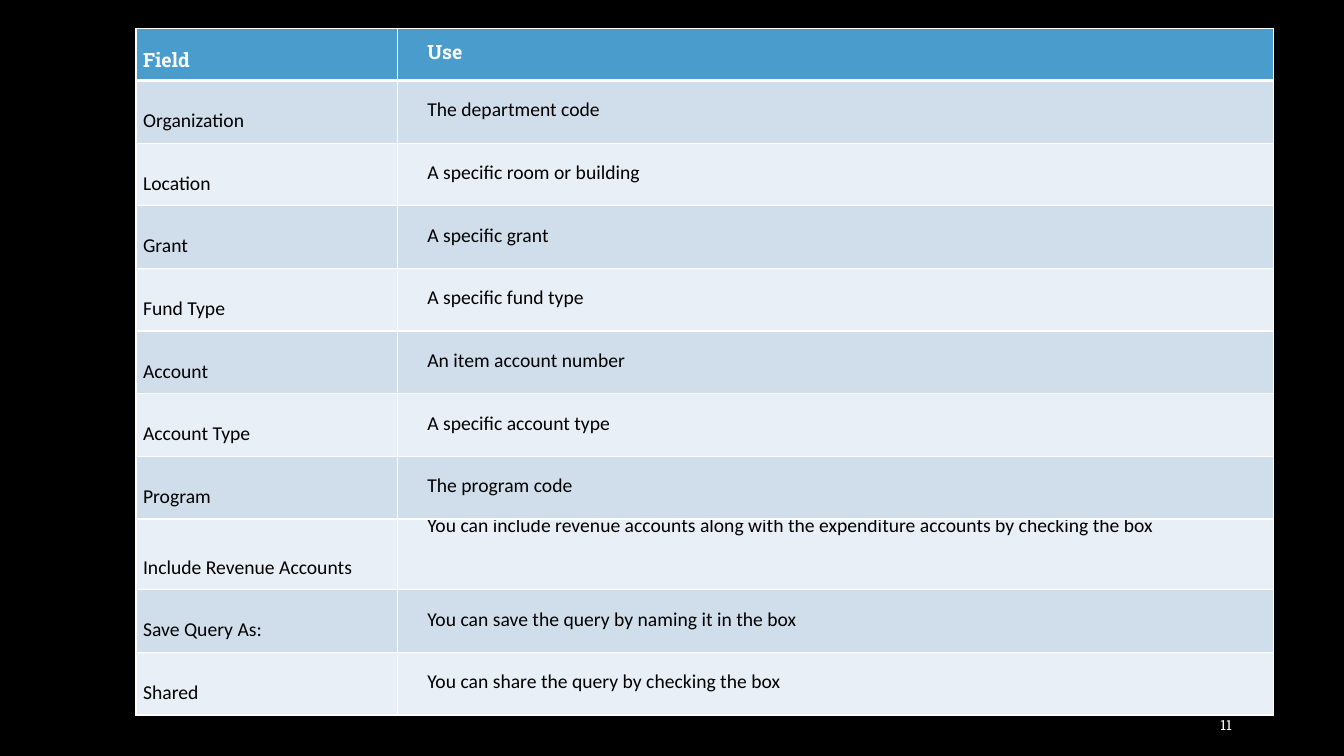
"""Builds the slide listing the query fields and what each is used for."""
from lxml import etree
from pptx import Presentation
from pptx.dml.color import RGBColor
from pptx.enum import text
from pptx.oxml import ns
from pptx.util import Pt

FIELDS = [
    ("Field", "Use"),
    ("Organization", "The department code"),
    ("Location", "A specific room or building"),
    ("Grant", "A specific grant"),
    ("Fund Type", "A specific fund type"),
    ("Account", "An item account number"),
    ("Account Type", "A specific account type"),
    ("Program", "The program code"),
    ("Include Revenue Accounts",
     "You can include revenue accounts along with the expenditure accounts by checking the box"),
    ("Save Query As:", "You can save the query by naming it in the box"),
    ("Shared", "You can share the query by checking the box"),
]
PAGE = "11"
COLORS = {"background": "000000", "header": "4A9CCC", "odd": "D0DEEC", "even": "E9EFF6",
          "light": "FFFFFF", "dark": "000000"}
LEFT, TOP = 97.2, 20.16
COLUMN_WIDTHS = (186.5, 625.7)
INDENTS = (5, 21.6)
HEADER_HEIGHT, ROW_HEIGHT, REVENUE_HEIGHT = 37.4, 44.75, 50.6
REVENUE_ROW = 8


def rgb(name):
    return RGBColor.from_string(COLORS[name])


def style(paragraph, size, font, color, bold=False):
    for run in paragraph.runs:
        run.font.size, run.font.name, run.font.bold = Pt(size), font, bold
        run.font.color.rgb = rgb(color)


def add_borders(cell, bottom_width):
    properties = cell._tc.get_or_add_tcPr()
    for index, (side, width) in enumerate(
            [("lnL", 1), ("lnR", 1), ("lnT", 1), ("lnB", bottom_width)]):
        line = etree.Element(ns.qn("a:" + side), w=str(Pt(width)))
        fill = etree.SubElement(line, ns.qn("a:solidFill"))
        etree.SubElement(fill, ns.qn("a:srgbClr"), val=COLORS["light"])
        properties.insert(index, line)


def fill_cell(cell, wording, row, column):
    header = row == 0
    cell.fill.solid()
    cell.fill.fore_color.rgb = rgb("header" if header else "odd" if row % 2 else "even")
    cell.margin_left, cell.margin_right = Pt(INDENTS[column]), 0
    cell.margin_top = cell.margin_bottom = 0
    if column == 0:
        cell.vertical_anchor = text.MSO_ANCHOR.BOTTOM
        cell.margin_bottom = Pt(5.8 if header else 7.45)
    else:
        cell.vertical_anchor = text.MSO_ANCHOR.TOP
        cell.margin_top = Pt(13.3 if header else 0 if row == REVENUE_ROW else 17.1)
    cell.text_frame.text = wording
    paragraph = cell.text_frame.paragraphs[0]
    paragraph.line_spacing = Pt(13.5 if (row, column) == (REVENUE_ROW, 1) else 12.6)
    style(paragraph, 14, "Roboto Slab" if header else "Calibri",
          "light" if header else "dark", header)
    add_borders(cell, 3 if row == 0 else 1)


def main():
    deck = Presentation()
    deck.slide_width, deck.slide_height = Pt(960), Pt(540)
    slide = deck.slides.add_slide(deck.slide_layouts[6])
    slide.background.fill.solid()
    slide.background.fill.fore_color.rgb = rgb("background")

    heights = [HEADER_HEIGHT] + [ROW_HEIGHT] * (len(FIELDS) - 1)
    heights[REVENUE_ROW] = REVENUE_HEIGHT
    fields = slide.shapes.add_table(
        len(FIELDS), len(COLUMN_WIDTHS), Pt(LEFT), Pt(TOP),
        Pt(sum(COLUMN_WIDTHS)), Pt(sum(heights))).table
    for column, width in enumerate(COLUMN_WIDTHS):
        fields.columns[column].width = Pt(width)
    for row, (wordings, height) in enumerate(zip(FIELDS, heights)):
        fields.rows[row].height = Pt(height)
        for column, wording in enumerate(wordings):
            fill_cell(fields.cell(row, column), wording, row, column)

    page = slide.shapes.add_textbox(Pt(828), Pt(503.3), Pt(59), Pt(28.8)).text_frame
    page.word_wrap = True
    page.vertical_anchor = text.MSO_ANCHOR.MIDDLE
    page.text = PAGE
    page.paragraphs[0].alignment = text.PP_ALIGN.RIGHT
    style(page.paragraphs[0], 10, "Roboto Slab", "light")

    deck.save("out.pptx")


if __name__ == "__main__":
    main()
